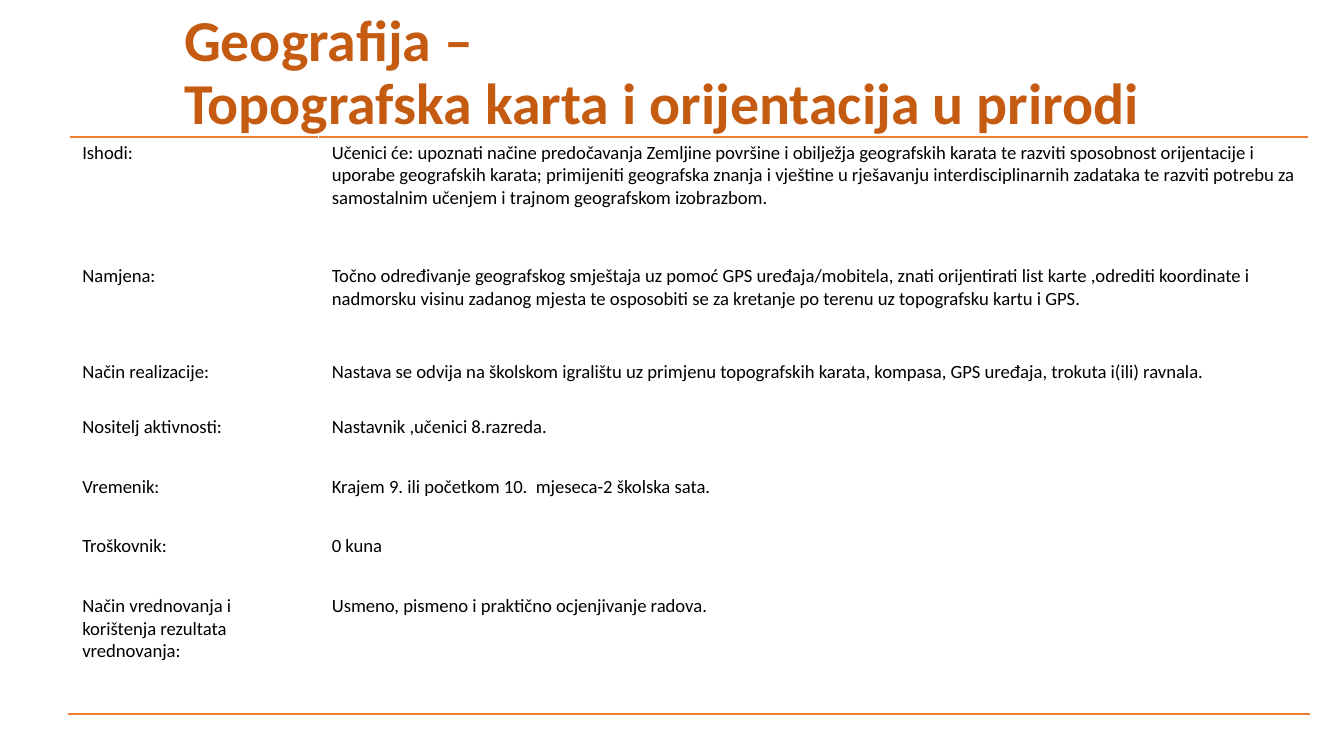
from lxml.etree import SubElement
from pptx import Presentation
from pptx.dml.color import RGBColor
from pptx.enum.text import MSO_ANCHOR, MSO_AUTO_SIZE, PP_ALIGN
from pptx.oxml.ns import qn
from pptx.util import Pt

HEADING = "Geografija –\vTopografska karta i orijentacija u prirodi"
PLAN = [
    ("Ishodi:",
     "Učenici će: upoznati načine predočavanja Zemljine površine i obilježja geografskih karata "
     "te razviti sposobnost orijentacije i uporabe geografskih karata; primijeniti geografska "
     "znanja i vještine u rješavanju interdisciplinarnih zadataka te razviti potrebu za "
     "samostalnim učenjem i trajnom geografskom izobrazbom.", 66.2),
    ("Namjena:",
     "Točno određivanje geografskog smještaja uz pomoć GPS uređaja/mobitela, znati orijentirati "
     "list karte ,odrediti koordinate i nadmorsku visinu zadanog mjesta te osposobiti se za "
     "kretanje po terenu uz topografsku kartu i GPS.", 51.2),
    ("Način realizacije:",
     "Nastava se odvija na školskom igralištu uz primjenu topografskih karata, kompasa, "
     "GPS uređaja, trokuta i(ili) ravnala.", 29.8),
    ("Nositelj aktivnosti:", "Nastavnik ,učenici 8.razreda.", 31.9),
    ("Vremenik:", "Krajem 9. ili početkom 10.  mjeseca-2 školska sata.", 31.9),
    ("Troškovnik:", "0 kuna", 31.9),
    ("Način vrednovanja i korištenja rezultata vrednovanja:",
     "Usmeno, pismeno i praktično ocjenjivanje radova.", 66.2),
]
COLUMN_WIDTHS = [133.7, 530.7]
FONT = "Calibri"
ORANGE, RUST, BLACK = "ED7D31", "C55A11", "000000"


def style(paragraph, size, color, bold=False):
    for run in paragraph.runs:
        run.font.name = FONT
        run.font.size = Pt(size)
        run.font.bold = bold
        run.font.color.rgb = RGBColor.from_string(color)


def add_border(cell, side, color):
    line = SubElement(cell._tc.get_or_add_tcPr(), qn(f"a:ln{side}"), w=str(Pt(1)))
    fill = SubElement(line, qn("a:solidFill"))
    SubElement(fill, qn("a:srgbClr"), val=color)


presentation = Presentation()
presentation.slide_width, presentation.slide_height = Pt(720), Pt(405)
slide = presentation.slides.add_slide(presentation.slide_layouts[5])

heading = slide.shapes.title
heading.left, heading.top, heading.width, heading.height = Pt(91.4), Pt(5.8), Pt(576), Pt(67.7)
frame = heading.text_frame
frame.text = HEADING
frame.word_wrap = True
frame.auto_size = MSO_AUTO_SIZE.NONE
frame.vertical_anchor = MSO_ANCHOR.MIDDLE
frame.margin_left = frame.margin_right = frame.margin_top = frame.margin_bottom = Pt(7.2)
frame.paragraphs[0].alignment = PP_ALIGN.LEFT
frame.paragraphs[0].line_spacing = 0.9
style(frame.paragraphs[0], 31, RUST, bold=True)

total_height = sum(height for _, _, height in PLAN)
plan = slide.shapes.add_table(len(PLAN), len(COLUMN_WIDTHS), Pt(36.9), Pt(73.4),
                              Pt(sum(COLUMN_WIDTHS)), Pt(total_height)).table
plan.first_row = plan.horz_banding = False
for column, width in zip(plan.columns, COLUMN_WIDTHS):
    column.width = Pt(width)

for row_index, (label, description, height) in enumerate(PLAN):
    row = plan.rows[row_index]
    row.height = Pt(height)
    for cell, text in zip(row.cells, (label, description)):
        cell.text_frame.text = text
        cell.margin_left = cell.margin_right = Pt(7.2)
        cell.margin_top = cell.margin_bottom = Pt(2.4)
        style(cell.text_frame.paragraphs[0], 10, BLACK)
        if row_index == 0:
            add_border(cell, "T", ORANGE)
        if row_index == len(PLAN) - 1:
            add_border(cell, "B", ORANGE)
        cell.fill.background()

presentation.save("out.pptx")
